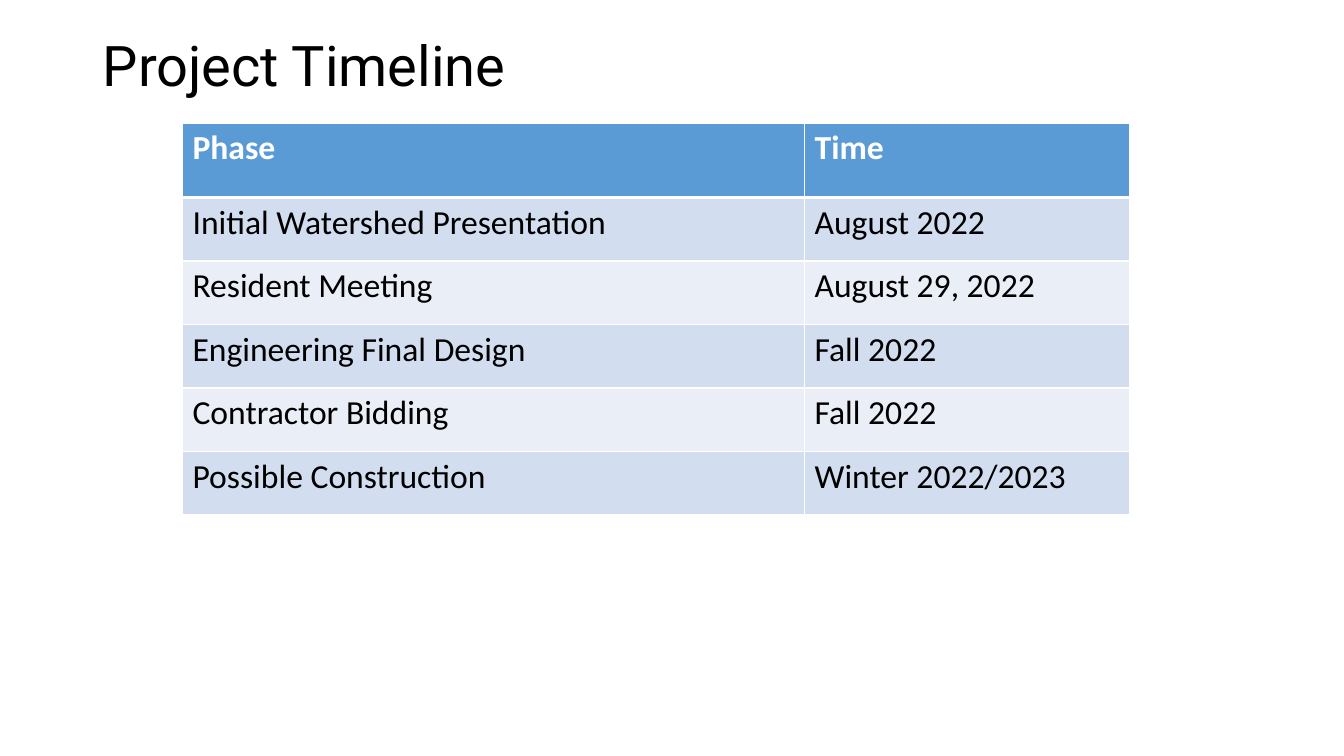
from lxml.etree import SubElement
from pptx import Presentation
from pptx.dml.color import RGBColor
from pptx.enum.text import MSO_ANCHOR, PP_ALIGN
from pptx.oxml.ns import qn
from pptx.util import Inches, Pt

TITLE = "Project Timeline"
ROWS = [
    ("Phase", "Time"),
    ("Initial Watershed Presentation", "August 2022"),
    ("Resident Meeting", "August 29, 2022"),
    ("Engineering Final Design", "Fall 2022"),
    ("Contractor Bidding", "Fall 2022"),
    ("Possible Construction", "Winter 2022/2023"),
]
COL_WIDTHS = (6.17, 3.22)
HEADER_HEIGHT, ROW_HEIGHT = 0.74, 0.63
COLORS = {
    "header": "5B9BD5",
    "odd": "D2DEEF",
    "even": "EAEFF7",
    "white": "FFFFFF",
    "text": "000000",
}


def rgb(name):
    return RGBColor.from_string(COLORS[name])


def set_font(p, name, size, color, bold=False):
    p.font.name = name
    p.font.size = Pt(size)
    p.font.bold = bold
    p.font.color.rgb = rgb(color)


def add_borders(cell, top, bottom):
    tcPr = cell._tc.get_or_add_tcPr()
    for tag, width in (("lnL", 1), ("lnR", 1), ("lnT", top), ("lnB", bottom)):
        ln = SubElement(tcPr, qn(f"a:{tag}"), w=str(Pt(width)))
        fill = SubElement(ln, qn("a:solidFill"))
        SubElement(fill, qn("a:srgbClr"), val=COLORS["white"])


def add_title(slide):
    title = slide.shapes.title
    title.left, title.top = Inches(0.92), Inches(0.4)
    title.width, title.height = Inches(11.5), Inches(0.55)
    tf = title.text_frame
    tf.text = TITLE
    tf.word_wrap = True
    tf.vertical_anchor = MSO_ANCHOR.MIDDLE
    p = tf.paragraphs[0]
    p.alignment = PP_ALIGN.LEFT
    p.line_spacing = 0.9
    set_font(p, "Roboto", 40, "text")


def add_timeline(slide):
    heights = [HEADER_HEIGHT] + [ROW_HEIGHT] * (len(ROWS) - 1)
    table = slide.shapes.add_table(
        len(ROWS), len(COL_WIDTHS), Inches(1.81), Inches(1.22),
        Inches(sum(COL_WIDTHS)), Inches(sum(heights))).table
    for column, width in zip(table.columns, COL_WIDTHS):
        column.width = Inches(width)
    for i, (row, height) in enumerate(zip(ROWS, heights)):
        table.rows[i].height = Inches(height)
        header = i == 0
        band = "header" if header else "odd" if i % 2 else "even"
        for j, text in enumerate(row):
            cell = table.cell(i, j)
            add_borders(cell, 3 if i == 1 else 1, 3 if header else 1)
            cell.fill.solid()
            cell.fill.fore_color.rgb = rgb(band)
            cell.text = text
            set_font(cell.text_frame.paragraphs[0], "Calibri", 24,
                     "white" if header else "text", header)


def main():
    prs = Presentation()
    prs.slide_width, prs.slide_height = Inches(13.33), Inches(7.5)
    slide = prs.slides.add_slide(prs.slide_layouts[5])
    add_title(slide)
    add_timeline(slide)
    prs.save("out.pptx")


if __name__ == "__main__":
    main()
